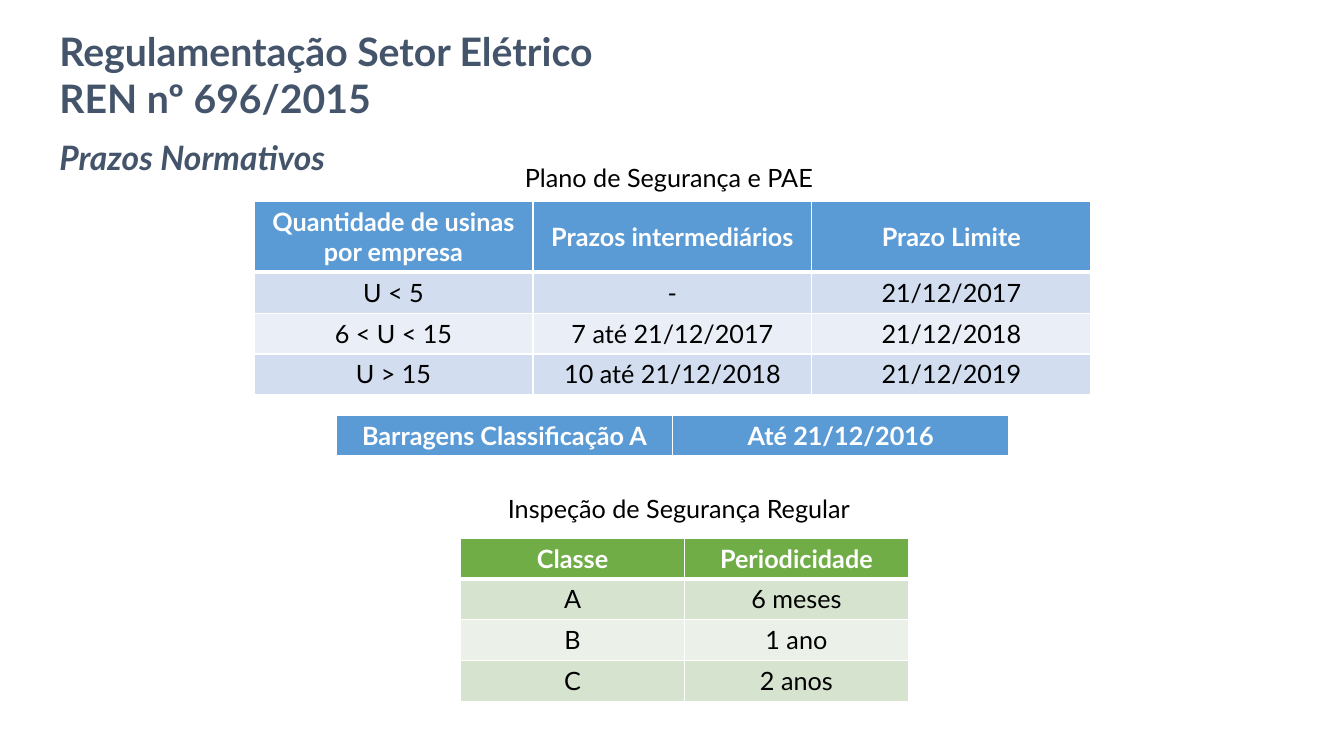
from dataclasses import dataclass

from lxml import etree
from pptx import Presentation
from pptx.dml.color import RGBColor
from pptx.enum.text import MSO_ANCHOR, PP_ALIGN
from pptx.oxml.ns import qn
from pptx.util import Cm, Pt

MIDDLE, TOP = MSO_ANCHOR.MIDDLE, MSO_ANCHOR.TOP
LEFT, CENTER = PP_ALIGN.LEFT, PP_ALIGN.CENTER


@dataclass(frozen=True)
class Theme:
    """Colours, font and type sizes of the slide."""
    font: str = "Lato"
    slate: str = "44546A"
    white: str = "FFFFFF"
    black: str = "000000"
    blue: tuple = ("5B9BD5", "D2DEEF", "EAEFF7")
    green: tuple = ("70AD47", "D5E3CF", "EBF1E9")
    title: int = 28
    lead: int = 24
    body: int = 18
    thin: int = 1
    thick: int = 3


THEME = Theme()


def style(para, size, color, bold=False, slant=False, align=LEFT):
    """Set the font and alignment of one paragraph."""
    para.alignment = align
    font = para.font
    font.name, font.size = THEME.font, Pt(size)
    font.bold, font.italic = bold, slant
    font.color.rgb = RGBColor.from_string(color)


def add_text(slide, box, lines, size, color, wrap=True, anchor=TOP, **look):
    """Add a text box with one paragraph per line."""
    frame = slide.shapes.add_textbox(*map(Cm, box)).text_frame
    frame.word_wrap, frame.vertical_anchor = wrap, anchor
    frame.text = "\n".join(lines)
    for para in frame.paragraphs:
        style(para, size, color, **look)


def add_edge(cell, side, width):
    """Draw a white border on one side of a cell."""
    line = etree.SubElement(cell._tc.get_or_add_tcPr(), qn(f"a:ln{side}"), w=str(Pt(width)))
    fill = etree.SubElement(line, qn("a:solidFill"))
    etree.SubElement(fill, qn("a:srgbClr"), val=THEME.white)


def fill_cell(cell, text, row, shades):
    """Write and paint one cell, with row 0 as the header."""
    head = row == 0
    for side in "LRTB":
        rule = (side == "B" and head) or (side == "T" and row == 1)
        add_edge(cell, side, THEME.thick if rule else THEME.thin)
    cell.fill.solid()
    shade = shades[0] if head else shades[2 - row % 2]
    cell.fill.fore_color.rgb = RGBColor.from_string(shade)
    cell.vertical_anchor = MIDDLE if head else TOP
    cell.text = text
    color = THEME.white if head else THEME.black
    style(cell.text_frame.paragraphs[0], THEME.body, color, bold=head, align=CENTER)


def add_grid(slide, left, top, width, rows, shades, head=1.03, height=1.03):
    """Add a table with equal columns and a header row."""
    count = len(rows[0])
    total = head + height * (len(rows) - 1)
    table = slide.shapes.add_table(
        len(rows), count, Cm(left), Cm(top), Cm(width * count), Cm(total)).table
    for col in table.columns:
        col.width = Cm(width)
    for i, texts in enumerate(rows):
        table.rows[i].height = Cm(height if i else head)
        for j, text in enumerate(texts):
            fill_cell(table.cell(i, j), text, i, shades)


def main():
    """Build the slide and save it."""
    deck = Presentation()
    deck.slide_width, deck.slide_height = Cm(33.87), Cm(19.05)
    slide = deck.slides.add_slide(deck.slide_layouts[6])

    add_text(slide, (1.25, 0.58, 21.6, 2.6),
             ["Regulamentação Setor Elétrico", "REN nº 696/2015"],
             THEME.title, THEME.slate, anchor=MIDDLE, bold=True)
    add_text(slide, (1.25, 2.95, 25.4, 2), ["Prazos Normativos"],
             THEME.lead, THEME.slate, anchor=MIDDLE, bold=True, slant=True)

    add_text(slide, (12.98, 3.97, 7.85, 1.03), ["Plano de Segurança e PAE"],
             THEME.body, THEME.black, wrap=False)
    add_grid(slide, 6.4, 5.08, 7.03, [
        ("Quantidade de usinas por empresa", "Prazos intermediários", "Prazo Limite"),
        ("U < 5", "-", "21/12/2017"),
        ("6 < U < 15", "7 até 21/12/2017", "21/12/2018"),
        ("U > 15", "10 até 21/12/2018", "21/12/2019"),
    ], THEME.blue, head=1.78)
    add_grid(slide, 8.48, 10.47, 8.47,
             [("Barragens Classificação A", "Até 21/12/2016")], THEME.blue)

    add_text(slide, (12.55, 12.3, 9.37, 1.03), ["Inspeção de Segurança Regular"],
             THEME.body, THEME.black, wrap=False)
    add_grid(slide, 11.61, 13.56, 5.64, [
        ("Classe", "Periodicidade"),
        ("A", "6 meses"),
        ("B", "1 ano"),
        ("C", "2 anos"),
    ], THEME.green)

    deck.save("out.pptx")


if __name__ == "__main__":
    main()
